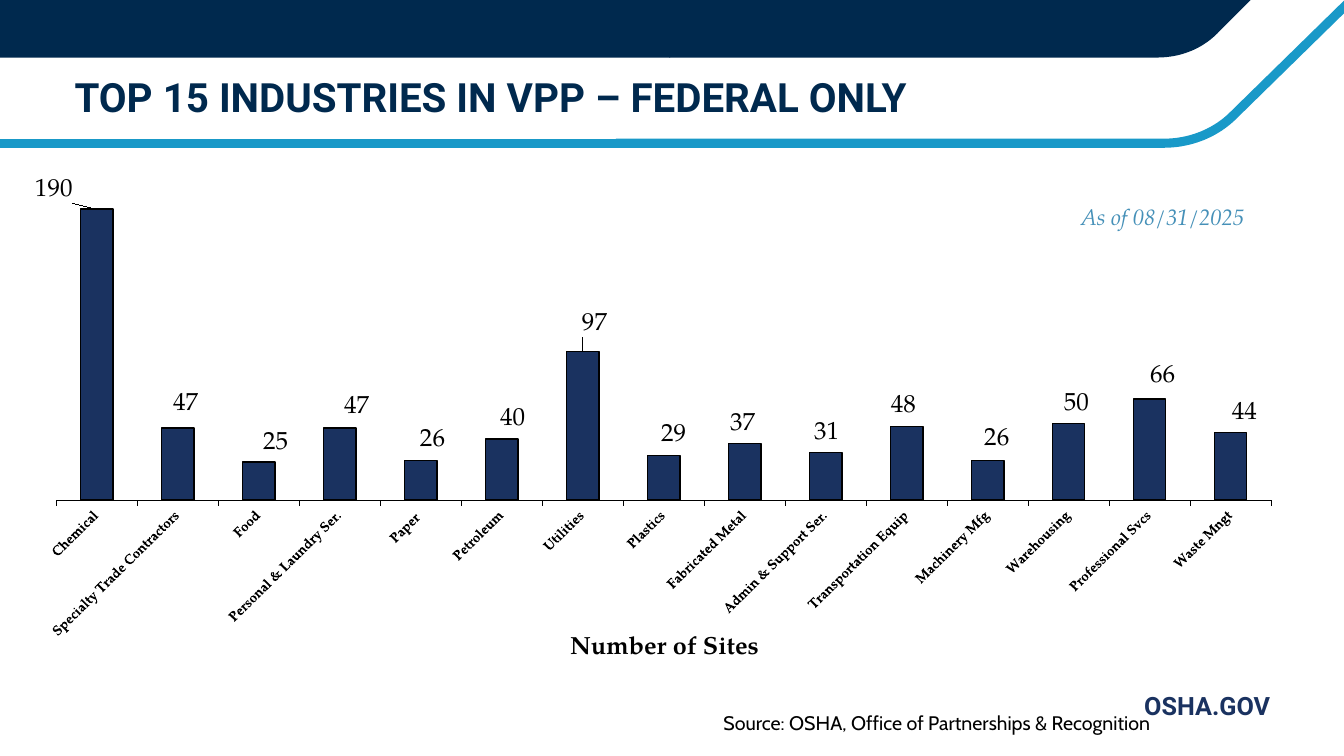
from typing import NamedTuple

from lxml import etree
from pptx import Presentation
from pptx.chart.data import CategoryChartData
from pptx.dml.color import RGBColor
from pptx.enum.chart import XL_CHART_TYPE, XL_LABEL_POSITION, XL_TICK_LABEL_POSITION, XL_TICK_MARK
from pptx.enum.shapes import MSO_CONNECTOR, MSO_SHAPE
from pptx.enum.text import MSO_ANCHOR, PP_ALIGN
from pptx.oxml.ns import qn
from pptx.util import Cm, Pt

COLORS = {"navy": "00294E", "bar": "1A3260", "stripe": "1999C8",
          "date": "4590B8", "black": "000000"}
COLUMNS = XL_CHART_TYPE.COLUMN_CLUSTERED
OUTSIDE_END = XL_LABEL_POSITION.OUTSIDE_END
LOW = XL_TICK_LABEL_POSITION.LOW
TICK_OUT, TICK_NONE = XL_TICK_MARK.OUTSIDE, XL_TICK_MARK.NONE
STRAIGHT, RECTANGLE = MSO_CONNECTOR.STRAIGHT, MSO_SHAPE.RECTANGLE
TOP, MIDDLE = MSO_ANCHOR.TOP, MSO_ANCHOR.MIDDLE
LEFT, CENTER, RIGHT = PP_ALIGN.LEFT, PP_ALIGN.CENTER, PP_ALIGN.RIGHT
SERIF = "TeX Gyre Pagella"
CHART_W, CHART_H = 32.16, 12.34

Point = tuple[float, float]


class Industry(NamedTuple):
    name: str
    sites: int
    dx: float  # label shift in cm
    dy: float


class Rule(NamedTuple):
    x1: float
    x2: float
    y: float
    weight: float


INDUSTRIES = [
    Industry("Chemical", 190, -1.08, -0.05),
    Industry("Specialty Trade Contractors", 47, 0.2, -0.18),
    Industry("Food", 25, 0.43, -0.03),
    Industry("Personal & Laundry Ser.", 47, 0.43, -0.1),
    Industry("Paper ", 26, 0.3, -0.08),
    Industry("Petroleum", 40, 0.28, -0.05),
    Industry("Utilities", 97, 0.3, -0.25),
    Industry("Plastics", 29, 0.25, -0.08),
    Industry("Fabricated Metal", 37, -0.05, -0.05),
    Industry("Admin & Support Ser.", 31, 0.03, -0.05),
    Industry("Transportation Equip", 48, -0.08, -0.08),
    Industry("Machinery Mfg", 26, 0.23, -0.1),
    Industry("Warehousing", 50, 0.2, -0.05),
    Industry("Professional Svcs", 66, 0.33, -0.15),
    Industry("Waste Mngt", 44, 0.35, -0.05),
]
RULES = [Rule(-0.05, 15.52, 3.61, 6.5), Rule(13.34, 17.7, 3.63, 5.5)]


def rgb(name: str) -> RGBColor:
    return RGBColor.from_string(COLORS[name])


def style_font(font, name: str, size: float, color: str, bold=False, italic=False) -> None:
    font.name, font.size, font.bold, font.italic = name, Pt(size), bold, italic
    font.color.rgb = rgb(color)


def add_text(s, text: str, x: float, y: float, w: float, h: float, *, font: str,
             size: float, color: str, bold=False, italic=False,
             align=LEFT, anchor=TOP) -> None:
    tf = s.shapes.add_textbox(Cm(x), Cm(y), Cm(w), Cm(h)).text_frame
    tf.word_wrap, tf.vertical_anchor = True, anchor
    p = tf.paragraphs[0]
    p.alignment = align
    r = p.add_run()
    r.text = text
    style_font(r.font, font, size, color, bold, italic)


def bezier(a: Point, b: Point, c: Point, d: Point, steps: int = 24) -> list[Point]:
    def at(t: float, i: int) -> float:
        u = 1 - t
        return u**3 * a[i] + 3 * u * u * t * b[i] + 3 * u * t * t * c[i] + t**3 * d[i]
    return [(at(n / steps, 0), at(n / steps, 1)) for n in range(steps + 1)]


def add_outline(s, points: list[Point], close: bool):
    first, *rest = [(Cm(x), Cm(y)) for x, y in points]
    builder = s.shapes.build_freeform(*first)
    builder.add_line_segments(rest, close=close)
    sp = builder.convert_to_shape()
    sp.shadow.inherit = False
    return sp


def fill_navy(sp) -> None:
    sp.shadow.inherit = False
    sp.fill.solid()
    sp.fill.fore_color.rgb = rgb("navy")
    sp.line.fill.background()


def style_line(line, color: str, weight: float) -> None:
    line.color.rgb, line.width = rgb(color), Pt(weight)


def set_layout(parent, after: str, target: str = "", **values: float) -> None:
    """Place a chart part by fractions of the chart size."""
    for old in parent.findall(qn("c:layout")):
        parent.remove(old)
    layout = etree.Element(qn("c:layout"))
    manual = etree.SubElement(layout, qn("c:manualLayout"))
    if target:
        etree.SubElement(manual, qn("c:layoutTarget"), val=target)
    for tag, value in values.items():
        etree.SubElement(manual, qn(f"c:{tag}"), val=str(value))
    if after:
        parent.find(qn(after)).addnext(layout)
    else:
        parent.insert(0, layout)


def add_header(s) -> None:
    # Blue stripe
    curve = bezier((31.12, 2.87), (30.66, 3.35), (30, 3.61), (29.34, 3.61))
    stripe = add_outline(s, [(34.47, -0.41), *curve, (15.52, 3.61)], close=False)
    stripe.fill.background()
    style_line(stripe.line, "stripe", 6.5)
    for rule in RULES:
        cxn = s.shapes.add_connector(STRAIGHT, Cm(rule.x1), Cm(rule.y), Cm(rule.x2), Cm(rule.y))
        style_line(cxn.line, "stripe", rule.weight)
        etree.SubElement(cxn._element.spPr, qn("a:effectLst"))
    # Navy band
    curve = bezier((29.16, 1.45), (29.77, 1.45), (30.33, 1.22), (30.73, 0.79))
    fill_navy(add_outline(s, [(16.87, 1.45), *curve, (33.71, -2.21), (16.87, -2.21)], close=True))
    fill_navy(s.shapes.add_shape(RECTANGLE, Cm(-0.05), Cm(-2.21), Cm(16.94), Cm(3.66)))


def add_sites_chart(s) -> None:
    data = CategoryChartData()
    data.categories = [i.name for i in INDUSTRIES]
    data.add_series("Series 1", [i.sites for i in INDUSTRIES])
    chart = s.shapes.add_chart(COLUMNS, Cm(0.1), Cm(4.5), Cm(CHART_W), Cm(CHART_H), data).chart
    chart.has_legend = chart.has_title = False
    style_font(chart.font, "Times New Roman", 17.9, "black", bold=True)
    plot = chart.plots[0]
    plot.gap_width, plot.vary_by_categories = 150, False
    set_layout(chart._chartSpace.chart.plotArea, "", "inner", xMode="edge", yMode="edge",
               x=0.041, y=0.015, w=0.952, h=0.646)

    # Axes
    val = chart.value_axis
    val.minimum_scale, val.maximum_scale = 0, 203
    val.visible = val.has_major_gridlines = False
    cat = chart.category_axis
    cat.major_tick_mark, cat.minor_tick_mark = TICK_OUT, TICK_NONE
    cat.tick_label_position = LOW
    style_line(cat.format.line, "black", 0.25)
    style_font(cat.tick_labels.font, SERIF, 10, "black", bold=True)
    cat._element.find(qn("c:txPr")).find(qn("a:bodyPr")).set("rot", "-2700000")
    title = cat.axis_title
    r = title.text_frame.paragraphs[0].add_run()
    r.text = "Number of Sites"
    style_font(r.font, SERIF, 18, "black", bold=True)
    set_layout(title._element, "c:tx", xMode="edge", yMode="edge", x=0.44, y=0.93)

    # Bars and their labels
    bars = plot.series[0]
    bars.format.fill.solid()
    bars.format.fill.fore_color.rgb = rgb("bar")
    style_line(bars.format.line, "black", 1)
    for n in range(len(INDUSTRIES)):
        label = bars.points[n].data_label
        style_font(label.font, SERIF, 17.9, "black")
        label.position = OUTSIDE_END
    for element, industry in zip(bars._element.iter(qn("c:dLbl")), INDUSTRIES):
        set_layout(element, "c:idx", x=round(industry.dx / CHART_W, 4),
                   y=round(industry.dy / CHART_H, 4))


def main() -> None:
    prs = Presentation()
    prs.slide_width, prs.slide_height = Cm(33.87), Cm(19.05)
    s = prs.slides.add_slide(prs.slide_layouts[6])
    add_text(s, "OSHA.GOV", 15.32, 17.27, 16.94, 1.02, font="Roboto", size=18,
             color="bar", bold=True, align=RIGHT)
    add_header(s)
    add_text(s, "TOP 15 INDUSTRIES IN VPP – FEDERAL ONLY", 1.63, 1.73, 27.69, 1.42,
             font="Roboto", size=28.8, color="navy", bold=True, anchor=MIDDLE)
    add_sites_chart(s)
    add_text(s, "As of 08/31/2025", 25.7, 4.5, 7.19, 1.91, font=SERIF, size=16,
             color="date", italic=True, align=CENTER, anchor=MIDDLE)
    add_text(s, "Source: OSHA, Office of Partnerships & Recognition", 17.98, 17.78, 11.43, 1.2,
             font="Cabin", size=14, color="black")
    prs.save("out.pptx")


if __name__ == "__main__":
    main()
